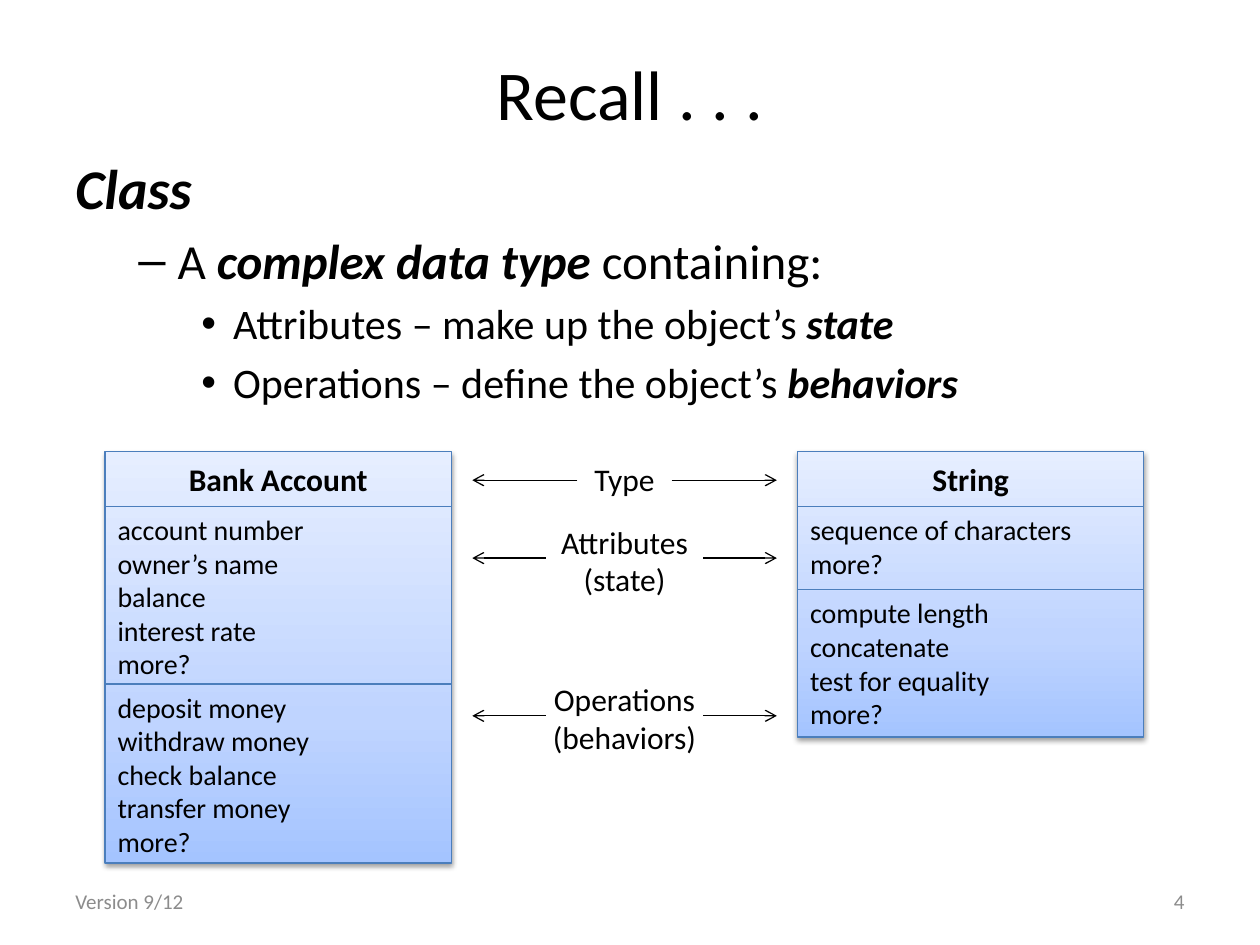
import pptx
import pptx.dml.color
import pptx.enum.shapes
import pptx.enum.text
import pptx.oxml
import pptx.oxml.ns
import pptx.util

Cm = pptx.util.Cm
Pt = pptx.util.Pt
ALIGN = pptx.enum.text.PP_ALIGN
ANCHOR = pptx.enum.text.MSO_ANCHOR
BLACK = pptx.dml.color.RGBColor(0x00, 0x00, 0x00)
GRAY = pptx.dml.color.RGBColor(0x8C, 0x8C, 0x8C)
BLUE = pptx.dml.color.RGBColor(0x4B, 0x7E, 0xBC)
FONT = "Calibri"
NAMESPACE = pptx.oxml.ns.nsdecls("a")

TITLE = "Recall . . ."
BODY = [
    (32, 0, 0, None, [("Class", True)]),
    (28, 2.06, -0.79, "–",
     [("A ", False), ("complex data type ", True), ("containing:", False)]),
    (24, 3.18, -0.64, "•",
     [("Attributes – make up the object’s ", False), ("state", True)]),
    (24, 3.18, -0.64, "•",
     [("Operations – define the object’s ", False), ("behaviors", True)]),
]
CARDS = [
    ("Bank Account", 2.12, [
        (3.58, ["account number", "owner’s name", "balance", "interest rate", "more?"]),
        (3.61, ["deposit money", "withdraw money", "check balance", "transfer money", "more?"]),
    ]),
    ("String", 16.08, [
        (1.68, ["sequence of characters", "more?"]),
        (2.97, ["compute length", "concatenate", "test for equality", "more?"]),
    ]),
]
LABELS = [
    (["Type"], 9.14, 1.02, 9.68, 1.9),
    (["Attributes (state)"], 10.41, 1.78, 11.25, 3.18),
    (["Operations", "(behaviors)"], 13.59, 1.78, 14.43, 3.18),
]
FOOTERS = [
    ("Version 9/12", 1.27, ALIGN.LEFT),
    ("4", 18.21, ALIGN.RIGHT),
]

CARD_TOP, CARD_WIDTH, HEADER_HEIGHT = 9.1, 6.98, 1.11
CENTER, LABEL_WIDTH, ARROW_REACH = 12.59, 4.24, 3.07
GRADIENT = [(0, "A4C4FF"), (35, "BFD4FF"), (100, "E6EEFF")]


def style_run(run, size, color=BLACK, bold=False, italic=False):
    run.font.name = FONT
    run.font.size = Pt(size)
    run.font.color.rgb = color
    run.font.bold = bold
    run.font.italic = italic


def add_text(slide, lines, left, top, width, height, size, align=ALIGN.LEFT,
             color=BLACK, bold=False, anchor=ANCHOR.TOP):
    box = slide.shapes.add_textbox(Cm(left), Cm(top), Cm(width), Cm(height))
    text_frame = box.text_frame
    text_frame.word_wrap = True
    text_frame.vertical_anchor = anchor
    text_frame.text = "\n".join(lines)
    for paragraph in text_frame.paragraphs:
        paragraph.alignment = align
        for run in paragraph.runs:
            style_run(run, size, color, bold)


def add_line(slide, start, end, y, color, arrow=False):
    connector = slide.shapes.add_connector(
        pptx.enum.shapes.MSO_CONNECTOR.STRAIGHT, Cm(start), Cm(y), Cm(end), Cm(y))
    connector.line.color.rgb = color
    connector.line.width = Pt(0.75)
    if arrow:
        connector.line._get_or_add_ln().append(
            pptx.oxml.parse_xml(f'<a:tailEnd {NAMESPACE} type="arrow"/>'))
    connector._element.spPr.append(pptx.oxml.parse_xml(f"<a:effectLst {NAMESPACE}/>"))


def add_title(slide):
    title = slide.shapes.title
    title.left, title.top, title.width, title.height = Cm(1.27), Cm(0.76), Cm(22.86), Cm(2.21)
    title.text_frame.text = TITLE
    title.text_frame.vertical_anchor = ANCHOR.MIDDLE
    paragraph = title.text_frame.paragraphs[0]
    paragraph.alignment = ALIGN.CENTER
    style_run(paragraph.runs[0], 40)


def add_body(slide):
    box = slide.shapes.add_textbox(Cm(1.27), Cm(2.97), Cm(22.86), Cm(5.08))
    text_frame = box.text_frame
    text_frame.word_wrap = True
    for index, (size, margin, indent, bullet, parts) in enumerate(BODY):
        paragraph = text_frame.add_paragraph() if index else text_frame.paragraphs[0]
        paragraph.space_before = Pt(size * 0.2)
        properties = paragraph._p.get_or_add_pPr()
        if bullet:
            properties.set("marL", str(Cm(margin)))
            properties.set("indent", str(Cm(indent)))
            properties.append(pptx.oxml.parse_xml(
                f'<a:buFont {NAMESPACE} typeface="Arial"/>'))
            properties.append(pptx.oxml.parse_xml(
                f'<a:buChar {NAMESPACE} char="{bullet}"/>'))
        for text, emphasis in parts:
            run = paragraph.add_run()
            run.text = text
            style_run(run, size, bold=emphasis, italic=emphasis)


def add_card(slide, name, left, sections):
    height = HEADER_HEIGHT + sum(section_height for section_height, _ in sections)
    card = slide.shapes.add_shape(pptx.enum.shapes.MSO_SHAPE.RECTANGLE, Cm(left),
                                  Cm(CARD_TOP), Cm(CARD_WIDTH), Cm(height))
    card.line.color.rgb = BLUE
    card.line.width = Pt(0.75)
    card.fill.background()
    properties = card._element.spPr
    stops = "".join(f'<a:gs pos="{position * 1000}"><a:srgbClr val="{color}"/></a:gs>'
                    for position, color in GRADIENT)
    properties.replace(
        properties.find(pptx.oxml.ns.qn("a:noFill")),
        pptx.oxml.parse_xml(f'<a:gradFill {NAMESPACE} rotWithShape="1"><a:gsLst>{stops}</a:gsLst>'
                            '<a:lin ang="16200000" scaled="0"/></a:gradFill>'))
    card.shadow.inherit = False
    properties.find(pptx.oxml.ns.qn("a:effectLst")).append(pptx.oxml.parse_xml(
        f'<a:outerShdw {NAMESPACE} blurRad="{Pt(3.1)}" dist="{Pt(1.6)}" dir="5400000" '
        'rotWithShape="0"><a:srgbClr val="000000"><a:alpha val="38000"/></a:srgbClr>'
        '</a:outerShdw>'))

    add_text(slide, [name], left, CARD_TOP + 0.04, CARD_WIDTH, 1.02, 18, ALIGN.CENTER, bold=True)
    top = CARD_TOP + HEADER_HEIGHT
    for section_height, lines in sections:
        add_line(slide, left, left + CARD_WIDTH, top, BLUE)
        add_text(slide, lines, left, top, CARD_WIDTH, section_height, 16)
        top += section_height


def main():
    presentation = pptx.Presentation()
    presentation.slide_width = Cm(25.4)
    presentation.slide_height = Cm(19.05)
    slide = presentation.slides.add_slide(presentation.slide_layouts[5])
    add_title(slide)
    add_body(slide)
    for name, left, sections in CARDS:
        add_card(slide, name, left, sections)
    for lines, top, height, arrow_y, gap in LABELS:
        add_text(slide, lines, CENTER - LABEL_WIDTH / 2, top, LABEL_WIDTH, height, 18, ALIGN.CENTER)
        for side in (-1, 1):
            add_line(slide, CENTER + side * gap / 2, CENTER + side * ARROW_REACH,
                     arrow_y, BLACK, arrow=True)
    for text, left, align in FOOTERS:
        add_text(slide, [text], left, 17.65, 5.92, 1.02, 12, align, GRAY, anchor=ANCHOR.MIDDLE)
    presentation.save("out.pptx")


if __name__ == "__main__":
    main()
